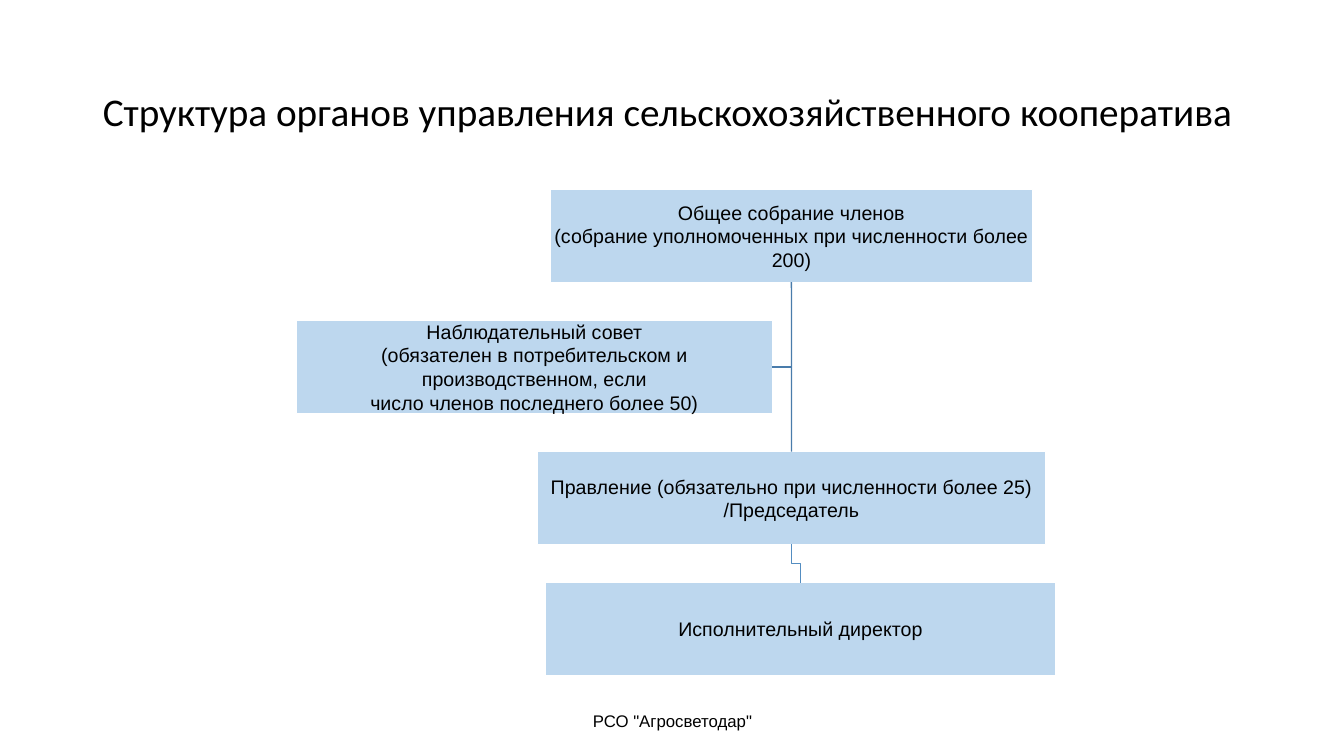
from pptx import Presentation
from pptx import util as u
from pptx.dml.color import RGBColor
from pptx.enum import shapes, text
from pptx.oxml import parse_xml
from pptx.oxml.ns import nsdecls

# Content: key, row, centre, width, lines of text
TITLE = "Структура органов управления сельскохозяйственного кооператива"
FOOTER = 'РСО "Агросветодар"'
BODIES = [
    ("meeting", 0, 7.85, 4.78, ["Общее собрание членов",
     "(собрание уполномоченных при численности более 200)"]),
    ("council", 1, 5.3, 4.72, ["Наблюдательный совет",
     "(обязателен в потребительском и производственном, если",
     "число членов последнего более 50)"]),
    ("board", 2, 7.85, 5.04, ["Правление (обязательно при численности более 25)",
     "/Председатель"]),
    ("director", 3, 7.94, 5.07, ["Исполнительный директор"]),
]
COLORS = {"box": "BDD7EE", "edge": "FFFFFF", "ink": "000000",
          "upper": "497CAB", "lower": "538DC1"}
TOP, STEP, HIGH = 1.88, 1.3, 0.92


def color(name):
    return RGBColor.from_string(COLORS[name])


def write(frame, lines, size, font, align):
    frame.word_wrap = True
    frame.vertical_anchor = text.MSO_ANCHOR.MIDDLE
    frame.text = "\n".join(lines)
    for para in frame.paragraphs:
        para.alignment = align
        para.font.size = u.Pt(size)
        para.font.name = font
        para.font.color.rgb = color("ink")


def stroke(shape, name):
    shape.line.color.rgb = color(name)
    shape.line.width = u.Pt(1)


def bend(slide, points, name):
    """Draw an open line through points given in inches."""
    start, *rest = [(u.Inches(x), u.Inches(y)) for x, y in points]
    path = slide.shapes.build_freeform(*start)
    path.add_line_segments(rest, close=False)
    line = path.convert_to_shape()
    line.fill.background()
    line.shadow.inherit = False
    stroke(line, name)


def main():
    deck = Presentation()
    deck.slide_width, deck.slide_height = u.Inches(13.33), u.Inches(7.5)
    slide = deck.slides.add_slide(deck.slide_layouts[5])
    center = text.PP_ALIGN.CENTER

    # Title and footer
    title = slide.shapes.title
    title.left, title.top = u.Inches(0.92), u.Inches(0.4)
    title.width, title.height = u.Inches(11.5), u.Inches(1.45)
    write(title.text_frame, [TITLE], 28, "Calibri", text.PP_ALIGN.LEFT)
    title.text_frame.paragraphs[0].line_spacing = 0.9
    foot = slide.shapes.add_textbox(*map(u.Inches, (4.42, 6.95, 4.5, 0.4)))
    write(foot.text_frame, [FOOTER], 12, "Arial", center)

    # Governing bodies
    boxes, spots = {}, {}
    for key, row, mid, wide, lines in BODIES:
        top = TOP + row * STEP
        box = slide.shapes.add_shape(
            shapes.MSO_SHAPE.RECTANGLE,
            *map(u.Inches, (mid - wide / 2, top, wide, HIGH)))
        box.shadow.inherit = False
        box.fill.solid()
        box.fill.fore_color.rgb = color("box")
        stroke(box, "edge")
        frame = box.text_frame
        frame.margin_left = frame.margin_right = u.Inches(0.01)
        frame.margin_top = frame.margin_bottom = u.Inches(0.01)
        write(frame, lines, 14, "Arial", center)
        boxes[key], spots[key] = box, (mid, top, wide)

    # Straight link from the meeting to the board
    link = slide.shapes.add_connector(shapes.MSO_CONNECTOR.STRAIGHT, 0, 0, 0, 0)
    link.begin_connect(boxes["meeting"], 2)
    link.end_connect(boxes["board"], 0)
    stroke(link, "upper")
    link._element.spPr.append(parse_xml("<a:effectLst %s/>" % nsdecls("a")))

    # Bent links to the council and the director
    trunk, top, _ = spots["meeting"]
    mid, side, wide = spots["council"]
    level = side + HIGH / 2
    bend(slide, [(trunk, top + HIGH), (trunk, level), (mid + wide / 2, level)],
         "upper")
    trunk, top, _ = spots["board"]
    mid, end, _ = spots["director"]
    level = (top + HIGH + end) / 2
    bend(slide, [(trunk, top + HIGH), (trunk, level), (mid, level), (mid, end)],
         "lower")

    deck.save("out.pptx")


if __name__ == "__main__":
    main()
